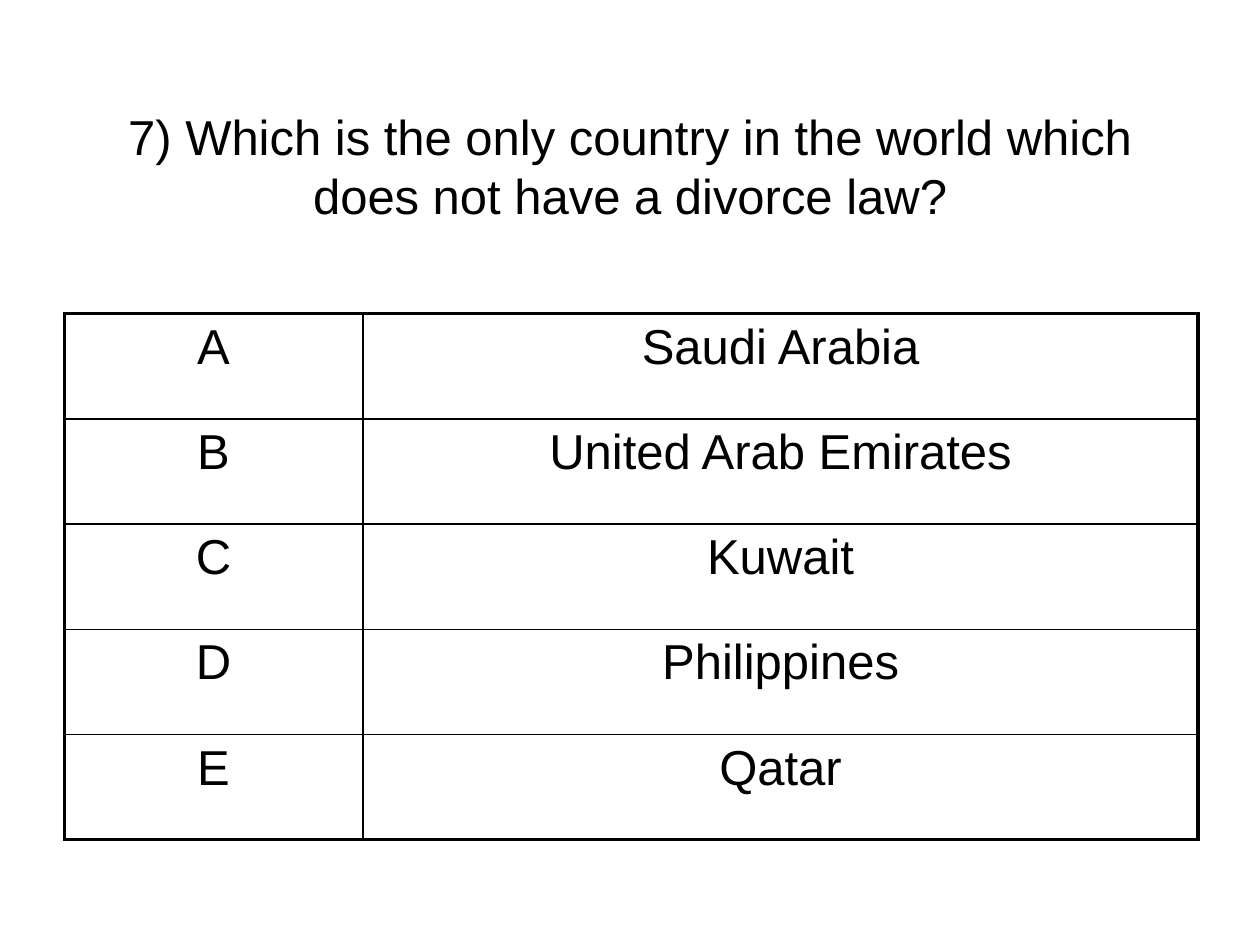
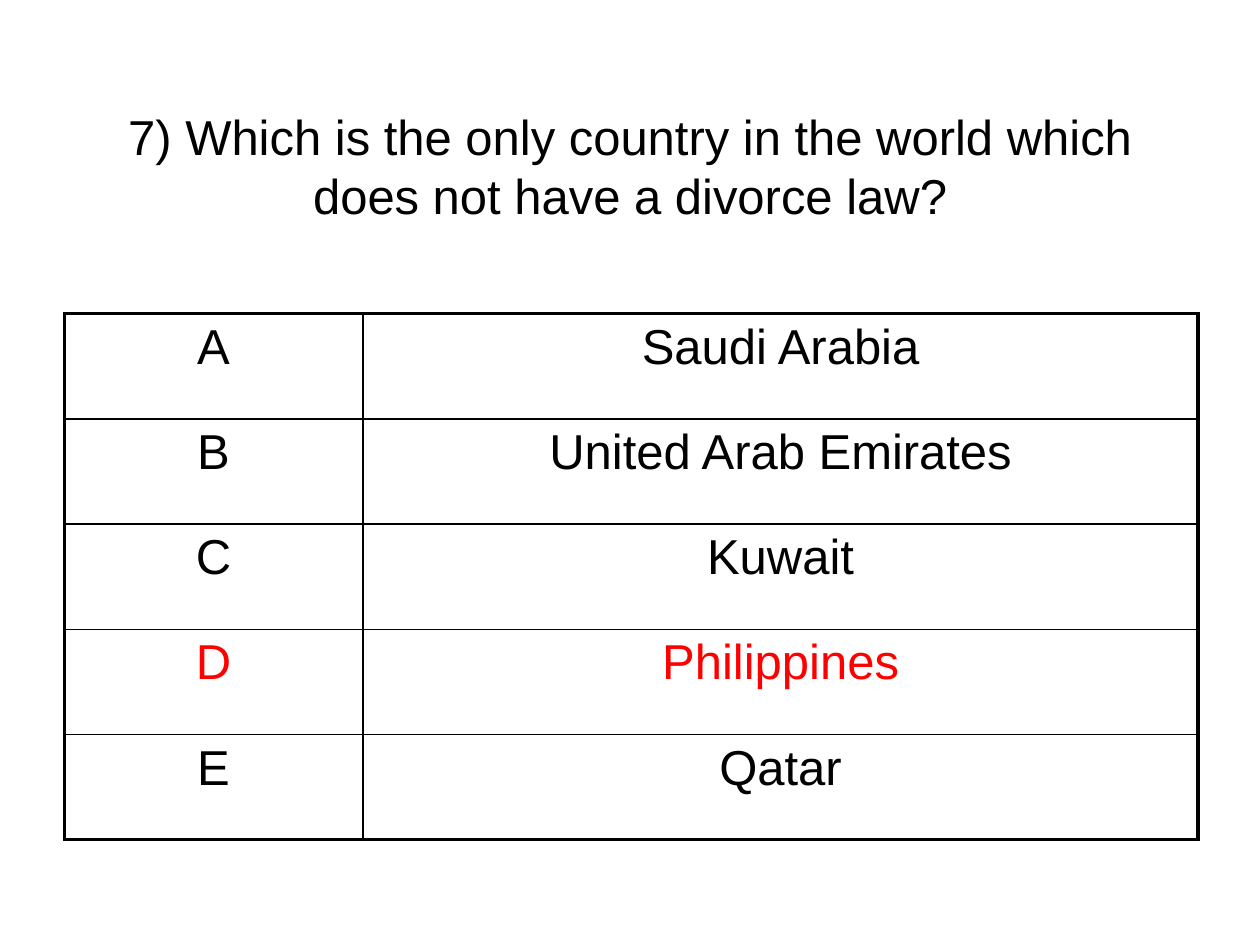
from lxml.etree import SubElement
from pptx import Presentation
from pptx.dml.color import RGBColor
from pptx.enum.text import MSO_ANCHOR as Anchor, PP_ALIGN as Align
from pptx.oxml import parse_xml
from pptx.oxml.ns import nsdecls, qn
from pptx.util import Emu, Pt

PX_PER_INCH = 200
BLACK, RED = "000000", "FF0000"
OUTER_PT, INNER_PT = 2.25, 1

QUESTION = "7) Which is the only country in the world which does not have a divorce law?"
ANSWERS = {
    "A": "Saudi Arabia",
    "B": "United Arab Emirates",
    "C": "Kuwait",
    "D": "Philippines",
    "E": "Qatar",
}
CORRECT = "D"


def px(length):
    return Emu(length * 914400 // PX_PER_INCH)


def color(hex_code):
    return RGBColor.from_string(hex_code)


class QuizDeck:
    font_name = "Arial"
    font_size = Pt(28)

    def __init__(self):
        self.deck = Presentation()
        self.deck.slide_width, self.deck.slide_height = px(2000), px(1500)
        self.slide = None

    def new_slide(self):
        self.slide = self.deck.slides.add_slide(self.deck.slide_layouts[6])

    def set_text(self, frame, text, hex_code=BLACK):
        frame.text = text
        paragraph = frame.paragraphs[0]
        paragraph.alignment = Align.CENTER
        font = paragraph.runs[0].font
        font.name, font.size = self.font_name, self.font_size
        font.color.rgb = color(hex_code)
        return paragraph

    def question(self, text):
        frame = self.slide.shapes.add_textbox(px(100), px(60), px(1800), px(406)).text_frame
        frame.word_wrap = True
        frame.vertical_anchor = Anchor.MIDDLE
        self.set_text(frame, text)

    def borders(self, cell, widths):
        """Draw the cell edges; widths run left, right, top, bottom in points."""
        properties = cell._tc.get_or_add_tcPr()
        for position, (side, width) in enumerate(zip("LRTB", widths)):
            properties.insert(position, parse_xml(
                f'<a:ln{side} {nsdecls("a")} w="{Pt(width)}"><a:solidFill>'
                f'<a:srgbClr val="{BLACK}"/></a:solidFill></a:ln{side}>'))

    def answers(self, choices, highlighted=None):
        row_height, column_widths = 167, (474, 1326)
        count = len(choices)
        grid = self.slide.shapes.add_table(
            count, 2, px(102), px(498), px(sum(column_widths)), px(row_height * count)).table
        grid.first_row = grid.horz_banding = False
        for column, width in zip(grid.columns, column_widths):
            column.width = px(width)

        for row, (letter, country) in enumerate(choices.items()):
            grid.rows[row].height = px(row_height)
            for col, text in enumerate((letter, country)):
                cell = grid.cell(row, col)
                cell.fill.background()
                paragraph = self.set_text(
                    cell.text_frame, text, RED if letter == highlighted else BLACK)
                # Space before is a share of the text size
                spacing = SubElement(paragraph._p.get_or_add_pPr(), qn("a:spcBef"))
                SubElement(spacing, qn("a:spcPct"), val="20000")
                on_frame = (col == 0, col == 1, row == 0, row == count - 1)
                self.borders(cell, [OUTER_PT if edge else INNER_PT for edge in on_frame])


def main():
    quiz = QuizDeck()
    # The question first, then the same slide with its answer revealed
    for revealed in (None, CORRECT):
        quiz.new_slide()
        quiz.question(QUESTION)
        quiz.answers(ANSWERS, revealed)
    quiz.deck.save("out.pptx")


if __name__ == "__main__":
    main()
